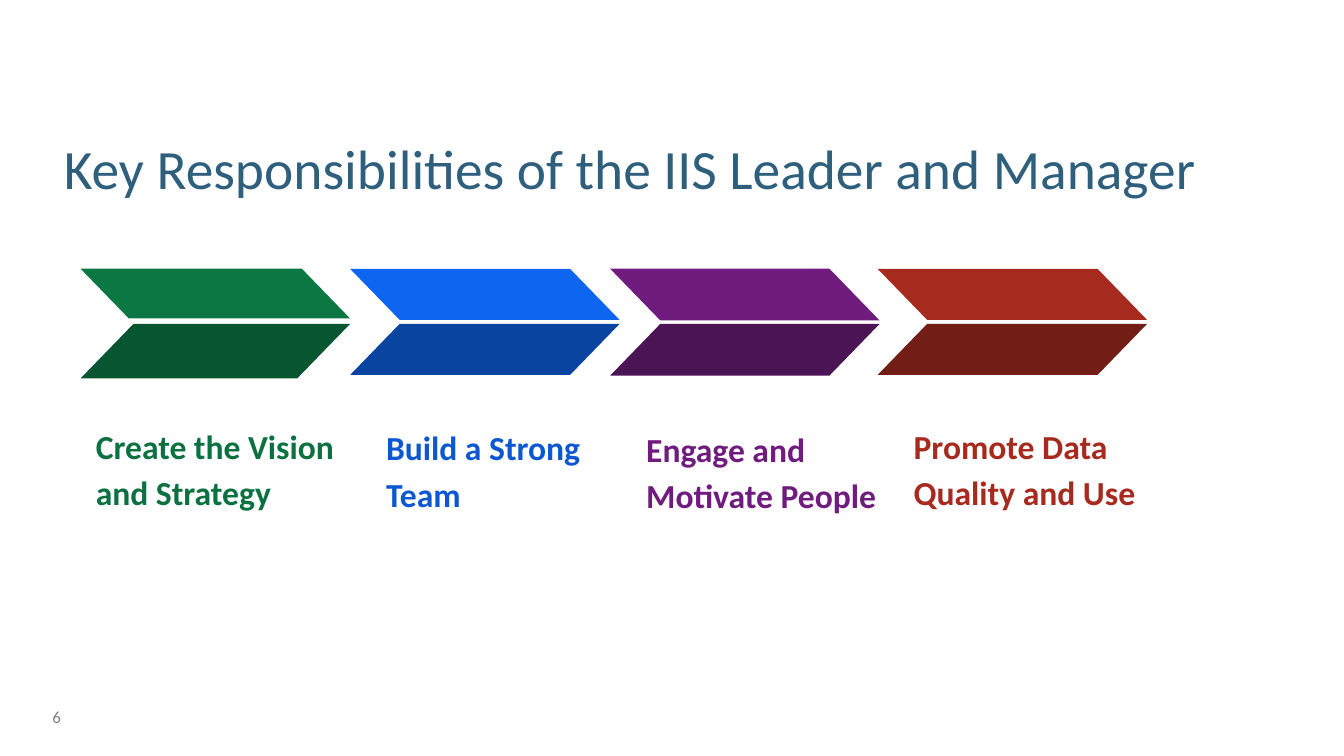
from pptx import Presentation
from pptx.dml.color import RGBColor
from pptx.enum.shapes import MSO_SHAPE
from pptx.enum.text import MSO_ANCHOR
from pptx.util import Pt

PX = 4572  # 200 px to the inch
SLIDE_W, SLIDE_H = 2000, 1125

TITLE_BLUE = RGBColor(0x2E, 0x5F, 0x7D)
GREY = RGBColor(0x7F, 0x7F, 0x7F)
GREEN = RGBColor(0x0B, 0x77, 0x43)
GREEN_TEXT = RGBColor(0x0B, 0x71, 0x40)
GREEN_DARK = RGBColor(0x08, 0x56, 0x31)
BLUE = RGBColor(0x0E, 0x65, 0xF0)
BLUE_TEXT = RGBColor(0x0C, 0x58, 0xD3)
BLUE_DARK = RGBColor(0x09, 0x44, 0xA1)
PURPLE = RGBColor(0x70, 0x1C, 0x7F)
PURPLE_DARK = RGBColor(0x4B, 0x14, 0x55)
RED = RGBColor(0xA7, 0x2A, 0x1E)
RED_DARK = RGBColor(0x72, 0x1D, 0x15)

ARROW_W, ARROW_TOP, LOWER_DY = 401, 400, 82
SLANT = 0.97

TITLE_FONT = {"name": "Calibri", "size": Pt(29.7)}
LABEL_FONT = {"name": "Calibri", "size": Pt(18), "bold": True}
NUMBER_FONT = {"name": "Calibri", "size": Pt(9)}

# left, (upper, lower) heights, label box (dx, dy, w, h), label, colours
STEPS = [
    (120, (74, 81), (3, 205, 446, 198), "Create the Vision and Strategy",
     (GREEN, GREEN_DARK, GREEN_TEXT)),
    (521, (76, 76), (34, 207, 412, 196), "Build a Strong Team",
     (BLUE, BLUE_DARK, BLUE_TEXT)),
    (908, (77, 77), (34, 209, 412, 338), "Engage and Motivate People",
     (PURPLE, PURPLE_DARK, PURPLE)),
    (1306, (76, 76), (34, 205, 420, 196), "Promote Data Quality and Use",
     (RED, RED_DARK, RED)),
]


def emu(*lengths):
    return [n * PX for n in lengths]


def add_text(shapes, box, text, font, color, inset, anchor=MSO_ANCHOR.TOP, spacing=None):
    """Add a wrapped text box; inset is (horizontal, vertical)."""
    tf = shapes.add_textbox(*emu(*box)).text_frame
    dx, dy = emu(*inset)
    frame = {"word_wrap": True, "vertical_anchor": anchor, "margin_left": dx,
             "margin_right": dx, "margin_top": dy, "margin_bottom": dy}
    for name, value in frame.items():
        setattr(tf, name, value)
    p = tf.paragraphs[0]
    p.line_spacing = spacing
    r = p.add_run()
    r.text = text
    for name, value in font.items():
        setattr(r.font, name, value)
    r.font.color.rgb = color


def add_band(shapes, box, color, flipped):
    """Add one slanted half of an arrow."""
    sp = shapes.add_shape(MSO_SHAPE.PARALLELOGRAM, *emu(*box))
    sp.adjustments[0] = SLANT
    sp.shadow.inherit = False
    sp.fill.solid()
    sp.fill.fore_color.rgb = color
    sp.line.fill.background()
    if flipped:
        sp._element.spPr.xfrm.set("flipH", "1")


def add_step(slide, left, top, heights, label_box, label, colors):
    """Add a two-tone arrow with its label, grouped."""
    shapes = slide.shapes.add_group_shape().shapes
    upper, lower, text_color = colors
    dx, dy, w, h = label_box
    add_text(shapes, (left + dx, top + dy, w, h), label, LABEL_FONT, text_color,
             (20, 20), spacing=1.15)
    add_band(shapes, (left, top, ARROW_W, heights[0]), upper, True)
    add_band(shapes, (left, top + LOWER_DY, ARROW_W, heights[1]), lower, False)


def main():
    prs = Presentation()
    prs.slide_width, prs.slide_height = emu(SLIDE_W, SLIDE_H)
    s = prs.slides.add_slide(prs.slide_layouts[6])
    add_text(s.shapes, (78, 1044, 88, 46), "6", NUMBER_FONT, GREY, (0, 8))
    for left, heights, label_box, label, colors in STEPS:
        add_step(s, left, ARROW_TOP, heights, label_box, label, colors)
    add_text(s.shapes, (81, 161, 1852, 176),
             "Key Responsibilities of the IIS Leader and Manager",
             TITLE_FONT, TITLE_BLUE, (14, 8), MSO_ANCHOR.MIDDLE)
    prs.save("out.pptx")


if __name__ == "__main__":
    main()
